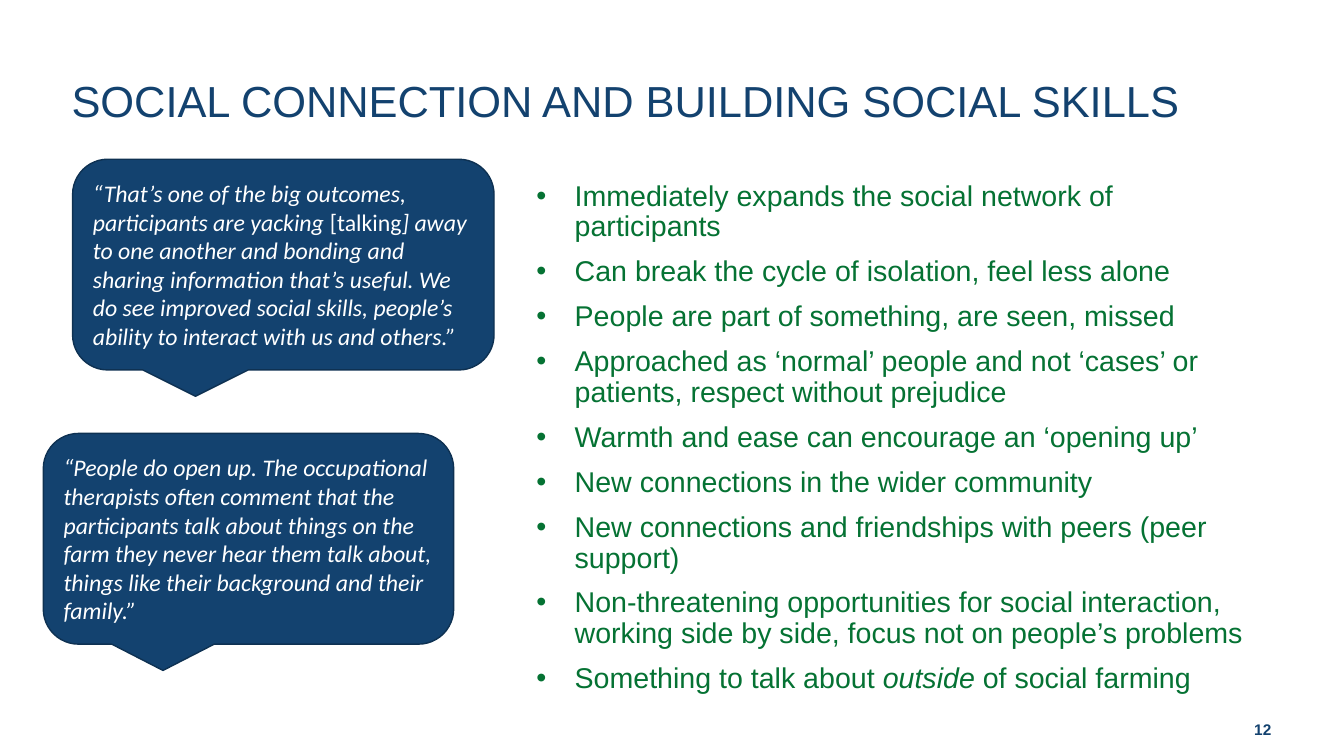
from dataclasses import dataclass

from lxml.etree import SubElement
from pptx import Presentation
from pptx.dml.color import RGBColor
from pptx.enum.shapes import MSO_SHAPE
from pptx.enum.text import MSO_ANCHOR, MSO_AUTO_SIZE, PP_ALIGN
from pptx.oxml.ns import qn
from pptx.shapes.base import BaseShape
from pptx.slide import Slide
from pptx.text.text import TextFrame, _Paragraph as Paragraph
from pptx.util import Inches, Pt


@dataclass(frozen=True)
class Theme:
    navy: RGBColor = RGBColor(0x13, 0x42, 0x6F)
    outline: RGBColor = RGBColor(0x0E, 0x31, 0x52)
    green: RGBColor = RGBColor(0x05, 0x72, 0x33)
    white: RGBColor = RGBColor(0xFF, 0xFF, 0xFF)
    sans: str = "Arial"
    quote_font: str = "Calibri"
    title_size: float = 31
    body_size: float = 20.4
    quote_size: float = 17
    number_size: float = 11


@dataclass(frozen=True)
class Box:
    left: float
    top: float
    width: float
    height: float


@dataclass(frozen=True)
class Span:
    text: str
    italic: bool = False


@dataclass(frozen=True)
class Quote:
    box: Box
    spans: tuple[Span, ...]


THEME = Theme()
TITLE = "SOCIAL CONNECTION AND BUILDING SOCIAL SKILLS"
TITLE_BOX = Box(0.71, 0.73, 12.22, 0.91)
BENEFITS_BOX = Box(5.22, 1.75, 7.39, 4.83)
NUMBER_BOX = Box(10.32, 6.89, 3, 0.6)
BULLET_INDENT = Inches(0.38)

BENEFITS = (
    (Span("Immediately expands the social network of participants"),),
    (Span("Can break the cycle of isolation, feel less alone"),),
    (Span("People are part of something, are seen, missed"),),
    (Span("Approached as ‘normal’ people and not ‘cases’ or patients, respect without prejudice"),),
    (Span("Warmth and ease can encourage an ‘opening up’"),),
    (Span("New connections in the wider community"),),
    (Span("New connections and friendships with peers (peer support)"),),
    (Span("Non-threatening opportunities for social interaction, working side by side, "
          "focus not on people’s problems"),),
    (Span("Something to talk about "), Span("outside", True), Span(" of social farming")),
)

QUOTES = (
    Quote(Box(0.72, 1.58, 4.18, 2.09), (
        Span("“That’s one of the big outcomes, participants are yacking ", True),
        Span("[talking"),
        Span("] away to one another and bonding and sharing information that’s useful. "
             "We do see improved social skills, people’s ability to interact with us and others.”", True),
    )),
    Quote(Box(0.43, 4.3, 4.07, 2.09), (
        Span("“People do open up. The occupational therapists often comment that the participants "
             "talk about things on the farm they never hear them talk about, things like their "
             "background and their family.”", True),
    )),
)


def place(shape: BaseShape, box: Box) -> None:
    shape.left, shape.top = Inches(box.left), Inches(box.top)
    shape.width, shape.height = Inches(box.width), Inches(box.height)


def prepare(frame: TextFrame, anchor: MSO_ANCHOR) -> None:
    frame.word_wrap = True
    frame.auto_size = MSO_AUTO_SIZE.NONE
    frame.vertical_anchor = anchor


def style(para: Paragraph, name: str, size: float, color: RGBColor, bold: bool = False) -> None:
    para.font.name = name
    para.font.size = Pt(size)
    para.font.bold = bold
    para.font.color.rgb = color


def write(para: Paragraph, spans: tuple[Span, ...]) -> None:
    for span in spans:
        run = para.add_run()
        run.text = span.text
        run.font.italic = span.italic


def add_bullet(para: Paragraph) -> None:
    properties = para._p.get_or_add_pPr()
    properties.set("marL", str(BULLET_INDENT))
    properties.set("indent", str(-BULLET_INDENT))
    SubElement(properties, qn("a:buFont")).set("typeface", THEME.sans)
    SubElement(properties, qn("a:buChar")).set("char", "•")


def draw_title(page: Slide) -> None:
    title = page.shapes.title
    place(title, TITLE_BOX)
    frame = title.text_frame
    prepare(frame, MSO_ANCHOR.TOP)
    frame.margin_left = 0
    para = frame.paragraphs[0]
    para.text = TITLE
    para.alignment = PP_ALIGN.LEFT
    para.line_spacing = Pt(34)
    style(para, THEME.sans, THEME.title_size, THEME.navy)


def draw_benefits(page: Slide) -> None:
    body = page.placeholders[1]
    place(body, BENEFITS_BOX)
    frame = body.text_frame
    prepare(frame, MSO_ANCHOR.TOP)
    for index, spans in enumerate(BENEFITS):
        para = frame.add_paragraph() if index else frame.paragraphs[0]
        add_bullet(para)
        para.line_spacing = 0.9
        para.space_before = Pt(10 if index else 0)
        style(para, THEME.sans, THEME.body_size, THEME.green)
        write(para, spans)


def draw_quote(page: Slide, quote: Quote) -> None:
    callout = page.shapes.add_shape(MSO_SHAPE.ROUNDED_RECTANGULAR_CALLOUT, 0, 0, 0, 0)
    place(callout, quote.box)
    callout.shadow.inherit = False
    callout.fill.solid()
    callout.fill.fore_color.rgb = THEME.navy
    callout.line.color.rgb = THEME.outline
    callout.line.width = Pt(1)
    prepare(callout.text_frame, MSO_ANCHOR.MIDDLE)
    para = callout.text_frame.paragraphs[0]
    para.alignment = PP_ALIGN.LEFT
    style(para, THEME.quote_font, THEME.quote_size, THEME.white)
    write(para, quote.spans)


def draw_page_number(page: Slide) -> None:
    number = page.shapes.add_textbox(0, 0, 0, 0)
    place(number, NUMBER_BOX)
    frame = number.text_frame
    prepare(frame, MSO_ANCHOR.BOTTOM)
    frame.margin_left = 0
    frame.margin_right, frame.margin_bottom = Inches(0.71), Inches(0.16)
    para = frame.paragraphs[0]
    para.text = "12"
    para.alignment = PP_ALIGN.RIGHT
    para.line_spacing = Pt(13.3)
    style(para, THEME.sans, THEME.number_size, THEME.navy, bold=True)


def main() -> None:
    deck = Presentation()
    deck.slide_width, deck.slide_height = Inches(13.33), Inches(7.5)
    page = deck.slides.add_slide(deck.slide_layouts[1])
    draw_title(page)
    draw_benefits(page)
    for quote in QUOTES:
        draw_quote(page, quote)
    draw_page_number(page)
    deck.save("out.pptx")


if __name__ == "__main__":
    main()
